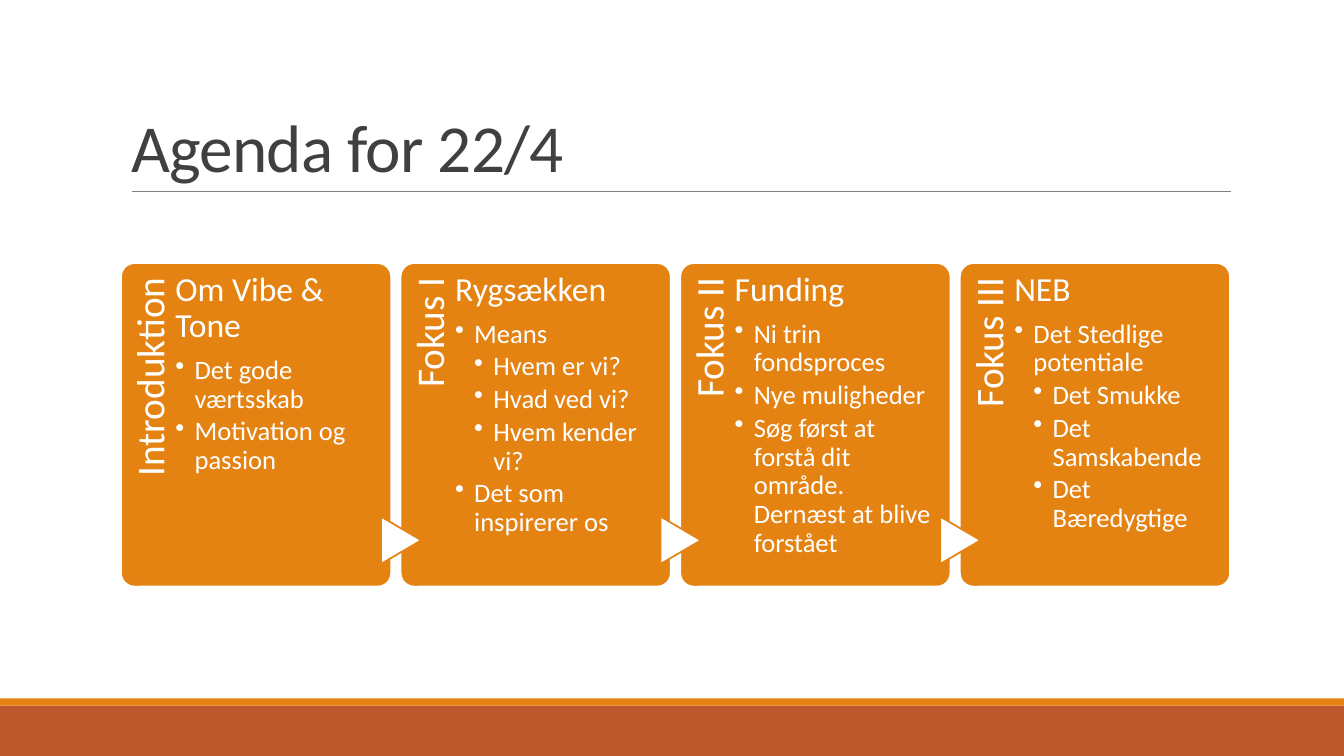
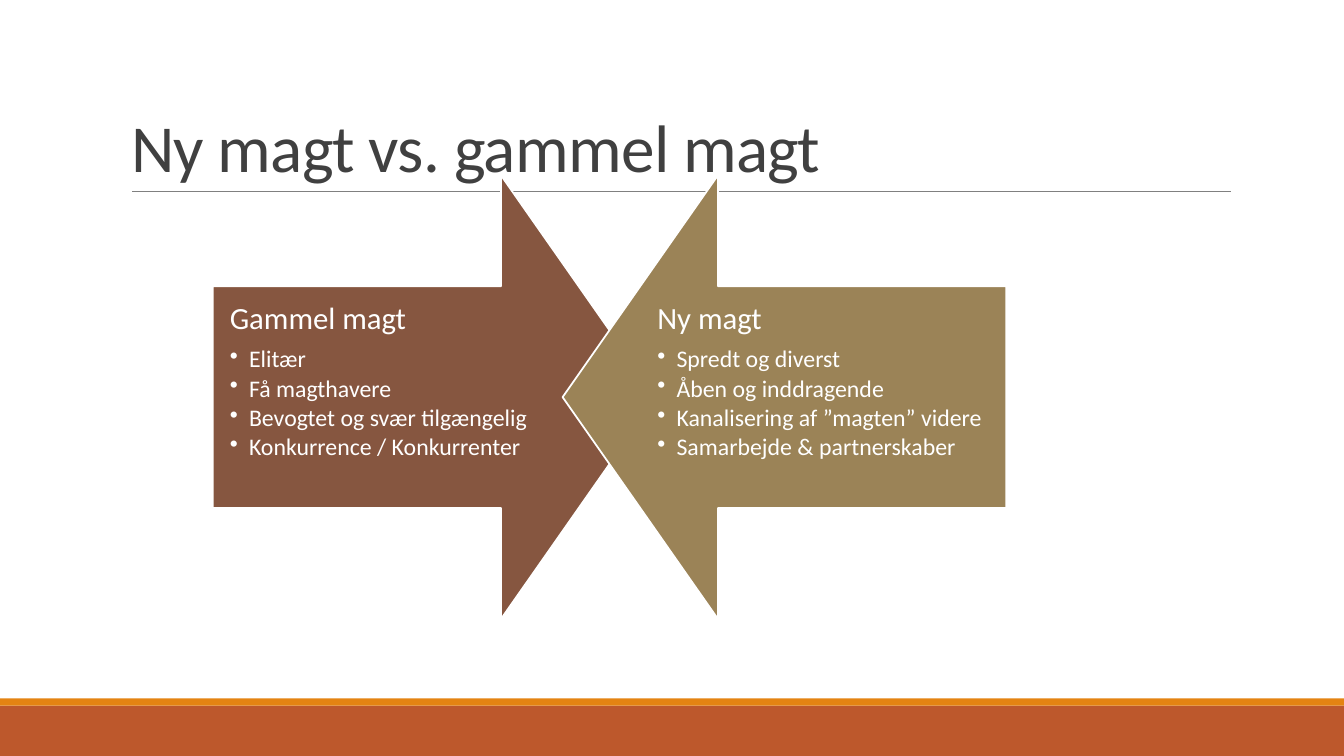
"""Builds two Danish workshop slides: an agenda and a contrast of old and new power."""
from lxml.etree import SubElement
from pptx import Presentation
from pptx.dml.color import RGBColor
from pptx.enum.shapes import MSO_CONNECTOR, MSO_SHAPE
from pptx.enum.text import MSO_ANCHOR, MSO_AUTO_SIZE, PP_ALIGN
from pptx.oxml.ns import qn
from pptx.util import Inches, Pt

AGENDA = "Agenda for 22/4"
CARDS = [
    ("Introduktion", "Om Vibe & Tone",
     [(1, "Det gode værtsskab"), (1, "Motivation og passion")]),
    ("Fokus I", "Rygsækken",
     [(1, "Means"), (2, "Hvem er vi?"), (2, "Hvad ved vi?"),
      (2, "Hvem kender vi?"), (1, "Det som inspirerer os")]),
    ("Fokus II", "Funding",
     [(1, "Ni trin fondsproces"), (1, "Nye muligheder"),
      (1, "Søg først at forstå dit område. Dernæst at blive forstået")]),
    ("Fokus III", "NEB",
     [(1, "Det Stedlige potentiale"), (2, "Det Smukke"),
      (2, "Det Samskabende"), (2, "Det Bæredygtige")]),
]
POWER = "Ny magt vs. gammel magt"
SIDES = [
    ("Gammel magt", "brown", 270, 2.11, 2.11,
     ["Elitær", "Få magthavere", "Bevogtet og svær tilgængelig",
      "Konkurrence / Konkurrenter"]),
    ("Ny magt", "sand", 90, 5.58, 6.35,
     ["Spredt og diverst", "Åben og inddragende",
      "Kanalisering af ”magten” videre", "Samarbejde & partnerskaber"]),
]
COLORS = {"rust": "BD582C", "orange": "E48312", "gray": "808080", "dark": "404040",
          "white": "FFFFFF", "brown": "865640", "sand": "9B8357"}
FONT = "Calibri"
WIDE, HIGH = 13.33, 7.5
LEFT, TOP, SPAN = 1.2, 2.61, 11
CARD_W, CARD_H = 2.68, 3.21
STEP = (SPAN - CARD_W) / (len(CARDS) - 1)
ARROW = 4.4


def color(name):
    return RGBColor.from_string(COLORS[name])


def add_box(slide, kind, place, fill, line=None):
    box = slide.shapes.add_shape(kind, *map(Inches, place))
    box.shadow.inherit = False
    box.fill.solid()
    box.fill.fore_color.rgb = color(fill)
    if line:
        box.line.color.rgb = color(line)
        box.line.width = Pt(1.25)
    else:
        box.line.fill.background()
    return box


def add_run(para, text, size, tone="white"):
    run = para.add_run()
    run.text = text
    run.font.name = FONT
    run.font.size = Pt(size)
    run.font.color.rgb = color(tone)
    return run


def add_text(slide, place, insets, size, small, head, items=()):
    box = slide.shapes.add_textbox(*map(Inches, place))
    frame = box.text_frame
    frame.word_wrap = True
    (frame.margin_left, frame.margin_top,
     frame.margin_right, frame.margin_bottom) = map(Inches, insets)
    for pos, (level, text) in enumerate([(0, head), *items]):
        para = frame.add_paragraph() if pos else frame.paragraphs[0]
        para.level = level
        para.line_spacing = 0.9
        para.space_after = Pt(small * 0.15 if level else size * 0.35)
        if level:
            props = para._p.get_or_add_pPr()
            props.set("marL", str(Inches(0.19 * level)))
            props.set("indent", str(Inches(-0.19)))
            SubElement(props, qn("a:buChar")).set("char", "•")
        add_run(para, text, small if level else size)
    return box


def style_layout(layout, slide):
    """Places the bands, the rule and the title frame on the shared layout."""
    title = layout.placeholders[0]
    title.left, title.top, title.width, title.height = map(Inches, (LEFT, 0.31, SPAN, 1.59))
    title.text_frame.vertical_anchor = MSO_ANCHOR.BOTTOM
    title.text_frame.auto_size = MSO_AUTO_SIZE.NONE
    rule = slide.shapes.add_connector(
        MSO_CONNECTOR.STRAIGHT, *map(Inches, (1.31, 1.9, 12.21, 1.9)))
    rule.line.color.rgb = color("gray")
    rule.line.width = Pt(0.5)
    SubElement(rule.element.spPr, qn("a:effectLst"))
    parts = [add_box(slide, MSO_SHAPE.RECTANGLE, (0, 7, WIDE, 0.5), "rust"),
             add_box(slide, MSO_SHAPE.RECTANGLE, (0, 6.93, WIDE, 0.07), "orange"), rule]
    for pos, part in enumerate(parts):
        layout.shapes.element.insert(2 + pos, part.element)


def add_title(slide, text):
    para = slide.shapes.title.text_frame.paragraphs[0]
    para.alignment = PP_ALIGN.LEFT
    para.line_spacing = 0.85
    run = add_run(para, text, 48, "dark")
    run._r.get_or_add_rPr().set("spc", "-50")


def draw_agenda(slide):
    add_title(slide, AGENDA)
    for pos, (label, head, items) in enumerate(CARDS):
        left = LEFT + pos * STEP
        card = add_box(slide, MSO_SHAPE.ROUNDED_RECTANGLE,
                       (left, TOP, CARD_W, CARD_H), "orange", "white")
        card.adjustments[0] = 0.05
        side = add_text(slide, (left - 1.05, 3.66, 2.63, 0.54),
                        (0, 0.1, 0.14, 0), 28, 28, label)
        side.rotation = 270
        side.text_frame.paragraphs[0].alignment = PP_ALIGN.RIGHT
        if pos:
            mark = add_box(slide, MSO_SHAPE.FLOWCHART_EXTRACT,
                           (left - 0.23, 5.16, 0.47, 0.4), "white", "orange")
            mark.rotation = 90
        add_text(slide, (left + 0.54, TOP, 1.99, CARD_H), (0, 0.09, 0, 0),
                 24, 19, head, items)


def draw_power(slide):
    add_title(slide, POWER)
    for head, fill, turn, left, start, items in SIDES:
        arrow = add_box(slide, MSO_SHAPE.DOWN_ARROW, (left, 1.74, ARROW, ARROW), fill, "white")
        arrow.rotation = turn
        arrow.adjustments[0] = 0.5
        arrow.adjustments[1] = 0.35
        add_text(slide, (start, 2.84, 3.63, ARROW / 2), (0.17,) * 4,
                 22, 17, head, [(1, item) for item in items])


def main():
    deck = Presentation()
    deck.slide_width, deck.slide_height = Inches(WIDE), Inches(HIGH)
    layout = deck.slide_layouts[5]
    first, second = (deck.slides.add_slide(layout) for _ in range(2))
    style_layout(layout, first)
    draw_agenda(first)
    draw_power(second)
    deck.save("out.pptx")


if __name__ == "__main__":
    main()
